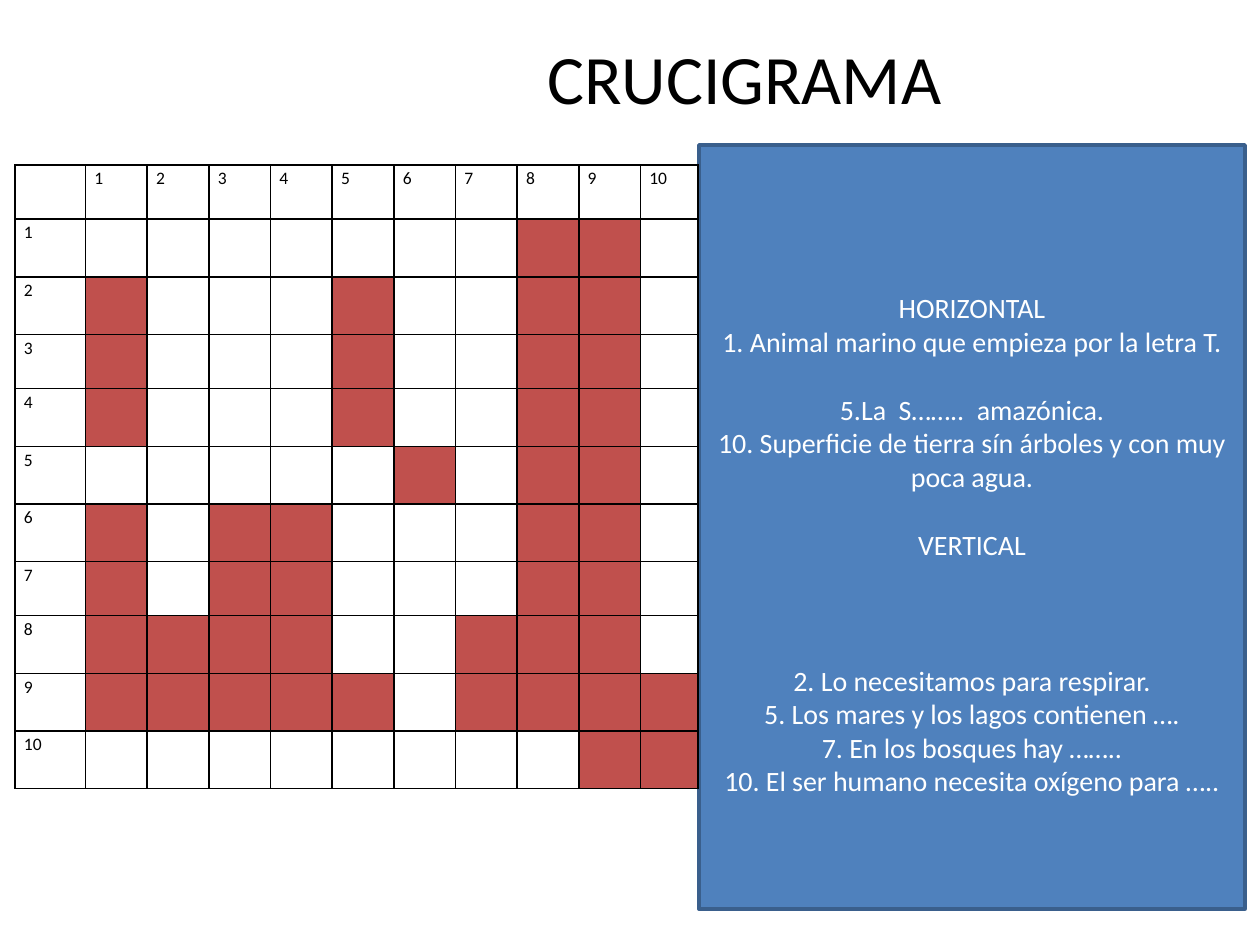
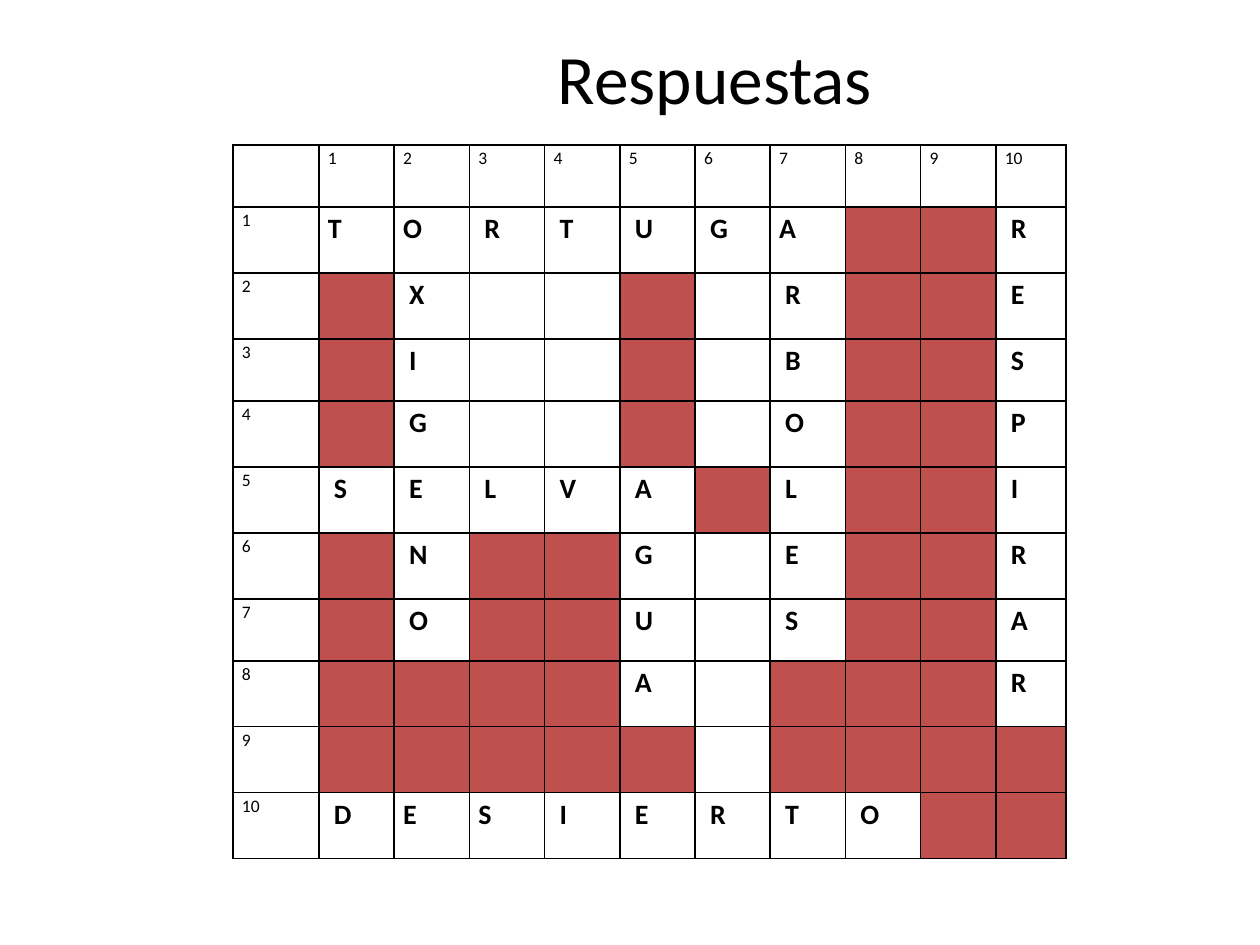
from dataclasses import dataclass

from lxml import etree
from pptx import Presentation
from pptx.dml.color import RGBColor
from pptx.enum.shapes import MSO_SHAPE
from pptx.enum.text import MSO_ANCHOR, PP_ALIGN
from pptx.oxml.ns import qn
from pptx.util import Emu, Pt

RECTANGLE = MSO_SHAPE.RECTANGLE
MIDDLE = MSO_ANCHOR.MIDDLE
CENTER = PP_ALIGN.CENTER
EMU_PER_PX = 914400 / 126
BLANK_LAYOUT = 6


@dataclass(frozen=True)
class Theme:
    font: str = "Calibri"
    black: str = "000000"
    white: str = "FFFFFF"
    blocked: str = "C0504D"
    panel: str = "4F81BD"
    panel_line: str = "3A5F8C"
    title_size: float = 39.6
    text_size: int = 16
    number_size: int = 10
    clue_line: float = 19.5


THEME = Theme()

# "#" is a blocked square, "." an open one without an answer letter
SOLUTION = [
    "TORTUGA##R",
    "#X..#.R##E",
    "#I..#.B##S",
    "#G..#.O##P",
    "SELVA#L##I",
    "#N##G.E##R",
    "#O##U.S##A",
    "####A.###R",
    "#####.####",
    "DESIERTO##",
]
# Squares (row, column) whose letter is not indented
FLUSH_LETTERS = {(1, 1), (1, 2), (1, 7), (10, 2), (10, 3)}
COLUMN_WEIGHTS = [86] + [75.2] * 9 + [70]
ROW_WEIGHTS = [62 if row in (0, 3, 7) else 66 for row in range(11)]

# Each clue line with the number of lines left free above it
CLUES = [
    ("HORIZONTAL", 0),
    ("1. Animal marino que empieza por la letra T.", 0),
    ("5.La  S……..  amazónica.", 1),
    ("10. Superficie de tierra sín árboles y con muy poca agua.", 0),
    ("VERTICAL", 1),
    ("2. Lo necesitamos para respirar.", 3),
    ("5. Los mares y los lagos contienen ….", 0),
    ("7. En los bosques hay ……..", 0),
    ("10. El ser humano necesita oxígeno para …..", 0),
]


def px(length):
    return Emu(round(length * EMU_PER_PX))


def rgb(color):
    return RGBColor.from_string(color)


def style_font(para, size, color, bold=False):
    para.font.name = THEME.font
    para.font.size = Pt(size)
    para.font.color.rgb = rgb(color)
    para.font.bold = bold


def add_title(page, text, box):
    frame = page.shapes.add_textbox(*map(px, box)).text_frame
    frame.word_wrap = True
    frame.vertical_anchor = MIDDLE
    para = frame.paragraphs[0]
    para.text = text
    para.alignment = CENTER
    style_font(para, THEME.title_size, THEME.black)


def add_clue_panel(page, box):
    panel = page.shapes.add_shape(RECTANGLE, *map(px, box))
    panel.shadow.inherit = False
    panel.fill.solid()
    panel.fill.fore_color.rgb = rgb(THEME.panel)
    panel.line.color.rgb = rgb(THEME.panel_line)
    panel.line.width = Pt(2)
    frame = panel.text_frame
    frame.word_wrap = True
    frame.vertical_anchor = MIDDLE
    frame.margin_top += Pt(THEME.clue_line)
    for index, (clue, free_lines) in enumerate(CLUES):
        para = frame.add_paragraph() if index else frame.paragraphs[0]
        para.text = clue
        para.alignment = CENTER
        if free_lines:
            para.space_before = Pt(free_lines * THEME.clue_line)
        style_font(para, THEME.text_size, THEME.white)


def add_borders(cell):
    properties = cell._tc.get_or_add_tcPr()
    for index, side in enumerate(("lnL", "lnR", "lnT", "lnB")):
        line = etree.Element(qn(f"a:{side}"), w=str(Pt(1)))
        fill = etree.SubElement(line, qn("a:solidFill"))
        etree.SubElement(fill, qn("a:srgbClr"), val=THEME.black)
        properties.insert(index, line)


def fill_cell(cell, row, column, show_answers):
    """Give one cell its number, or its square and answer letter."""
    cell.margin_left = cell.margin_right = px(9)
    cell.margin_top = cell.margin_bottom = 0
    para = cell.text_frame.paragraphs[0]
    para.line_spacing = 1.15
    if row == 0 or column == 0:
        cell.fill.background()
        para.text = str(row or column or "")
        style_font(para, THEME.number_size, THEME.black)
    else:
        square = SOLUTION[row - 1][column - 1]
        cell.fill.solid()
        cell.fill.fore_color.rgb = rgb(THEME.blocked if square == "#" else THEME.white)
        if show_answers and square.isalpha():
            para.text = square
            if (row, column) not in FLUSH_LETTERS:
                cell.margin_left = px(15)
        style_font(para, THEME.text_size, THEME.black, bold=True)
    add_borders(cell)


def add_crossword(page, box, show_answers):
    width, height = box[2:]
    table = page.shapes.add_table(
        len(ROW_WEIGHTS), len(COLUMN_WEIGHTS), *map(px, box)
    ).table
    table.first_row = table.horz_banding = False
    for column, weight in zip(table.columns, COLUMN_WEIGHTS):
        column.width = px(width * weight / sum(COLUMN_WEIGHTS))
    for row, weight in zip(table.rows, ROW_WEIGHTS):
        row.height = px(height * weight / sum(ROW_WEIGHTS))
    for row in range(len(ROW_WEIGHTS)):
        for column in range(len(COLUMN_WEIGHTS)):
            fill_cell(table.cell(row, column), row, column, show_answers)


def build_puzzle(page):
    add_title(page, "CRUCIGRAMA", (292, 38, 905, 77))
    add_clue_panel(page, (699, 145, 546, 764))
    add_crossword(page, (15, 165, 683, 624), show_answers=False)


def build_answers(page):
    add_title(page, "Respuestas", (233, 38, 964, 77))
    add_crossword(page, (233, 145, 833, 714), show_answers=True)


def main():
    deck = Presentation()
    deck.slide_width, deck.slide_height = px(1260), px(945)
    for build in (build_puzzle, build_answers):
        build(deck.slides.add_slide(deck.slide_layouts[BLANK_LAYOUT]))
    deck.save("out.pptx")


if __name__ == "__main__":
    main()
